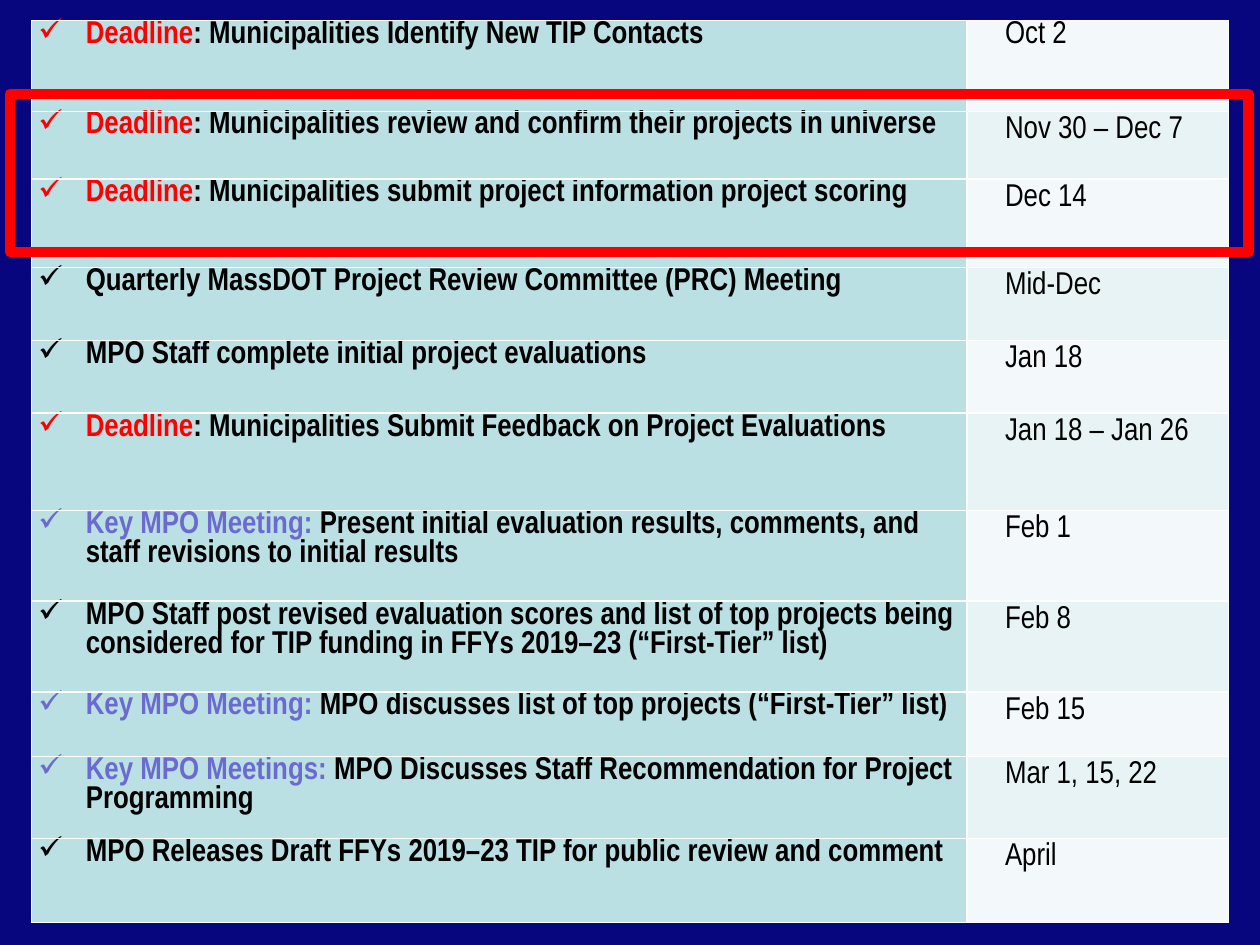
"""Builds the slide with the TIP development schedule and its highlighted deadlines."""
from dataclasses import dataclass
from typing import Optional

from lxml.etree import SubElement
from pptx import Presentation
from pptx.dml.color import RGBColor
from pptx.enum.shapes import MSO_SHAPE
from pptx.oxml.ns import qn
from pptx.util import Cm, Pt


@dataclass(frozen=True)
class Theme:
    """Colours, font and sizes of the slide."""
    back: str = "07067E"
    task_fill: str = "BBE0E3"
    date_fills: tuple = ("F3F9FA", "E7F3F4")
    border: str = "FEFFFC"
    text: str = "000000"
    deadline: str = "FF0000"
    meeting: str = "6B6BCF"
    font: str = "Arial Narrow"
    size: float = 18
    thin: float = 0.25
    rule: float = 1
    frame: float = 6


@dataclass(frozen=True)
class Step:
    """One schedule row: height in cm, task, date and an optional coloured lead."""
    height: float
    task: str
    date: str
    lead: str = ""
    color: Optional[str] = None


T = Theme()
COLS = (18.85, 5.28)
STEPS = (
    Step(1.83, ": Municipalities Identify New TIP Contacts", "Oct 2", "Deadline", T.deadline),
    Step(1.37, ": Municipalities review and confirm their projects in universe",
         "Nov 30 – Dec 7", "Deadline", T.deadline),
    Step(1.78, ": Municipalities submit project information project scoring",
         "Dec 14", "Deadline", T.deadline),
    Step(1.47, "Quarterly MassDOT Project Review Committee (PRC) Meeting", "Mid-Dec"),
    Step(1.47, "MPO Staff complete initial project evaluations", "Jan 18"),
    Step(1.96, ": Municipalities Submit Feedback on Project Evaluations",
         "Jan 18 – Jan 26", "Deadline", T.deadline),
    Step(1.83, "Present initial evaluation results, comments, and staff revisions to initial results",
         "Feb 1", "Key MPO Meeting: ", T.meeting),
    Step(1.83, "MPO Staff post revised evaluation scores and list of top projects being "
         "considered for TIP funding in FFYs 2019–23 (“First-Tier” list)", "Feb 8"),
    Step(1.3, "MPO discusses list of top projects (“First-Tier” list)",
         "Feb 15", "Key MPO Meeting: ", T.meeting),
    Step(1.65, "MPO Discusses Staff Recommendation for Project Programming",
         "Mar 1, 15, 22", "Key MPO Meetings: ", T.meeting),
    Step(1.7, "MPO Releases Draft FFYs 2019–23 TIP for public review and comment", "April"),
)


def rgb(color: str) -> RGBColor:
    """Turn a hex string into a colour."""
    return RGBColor.from_string(color)


def apply(obj, formats: dict) -> None:
    """Set every attribute named in the format values."""
    for name, value in formats.items():
        setattr(obj, name, value)


def add_run(p, text: str, color: str, bold: bool) -> None:
    """Add one formatted run to a paragraph."""
    r = p.add_run()
    r.text = text
    apply(r.font, {"name": T.font, "size": Pt(T.size), "bold": bold})
    r.font.color.rgb = rgb(color)


def style_cell(cell, fill: str, top: float, bottom: float) -> None:
    """Give a cell its margins, borders and fill."""
    apply(cell, {"margin_left": Cm(0.13), "margin_right": Cm(0.13),
                 "margin_top": 0, "margin_bottom": 0})
    tc_pr = cell._tc.get_or_add_tcPr()
    for side, width in (("L", T.rule), ("R", T.rule), ("T", top), ("B", bottom)):
        ln = SubElement(tc_pr, qn(f"a:ln{side}"), w=str(Pt(width)))
        SubElement(SubElement(ln, qn("a:solidFill")), qn("a:srgbClr"), val=T.border)
    cell.fill.solid()
    cell.fill.fore_color.rgb = rgb(fill)


def fill_task(cell, step: Step) -> None:
    """Write the checked task with its coloured lead."""
    p = cell.text_frame.paragraphs[0]
    p_pr = p._p.get_or_add_pPr()
    apply_indent = {"marL": str(Cm(0.96)), "indent": str(-Cm(0.96))}
    for name, value in apply_indent.items():
        p_pr.set(name, value)
    SubElement(p_pr, qn("a:buChar"), char="✓")
    if step.lead:
        add_run(p, step.lead, step.color, True)
    add_run(p, step.task, T.text, True)


def fill_date(cell, step: Step, spacing: float) -> None:
    """Write the date of a step."""
    p = cell.text_frame.paragraphs[0]
    p._p.get_or_add_pPr().set("marL", str(Cm(0.64)))
    p.line_spacing = spacing
    add_run(p, step.date, T.text, False)


def add_schedule(s) -> None:
    """Draw the schedule table."""
    height = sum(step.height for step in STEPS)
    tbl = s.shapes.add_table(len(STEPS), len(COLS), Cm(0.64), Cm(0.41),
                             Cm(sum(COLS)), Cm(height)).table
    apply(tbl, {"first_row": False, "horz_banding": False})
    for col, width in zip(tbl.columns, COLS):
        col.width = Cm(width)
    for i, step in enumerate(STEPS):
        tbl.rows[i].height = Cm(step.height)
        top = T.thin if i == 1 else T.rule
        bottom = T.thin if i == 0 else T.rule
        task, date = tbl.cell(i, 0), tbl.cell(i, 1)
        style_cell(task, T.task_fill, top, bottom)
        style_cell(date, T.date_fills[i % 2], top, bottom)
        fill_task(task, step)
        fill_date(date, step, 1.15 if i else 1.0)


def add_highlight(s) -> None:
    """Frame the municipal project deadlines."""
    sp = s.shapes.add_shape(MSO_SHAPE.RECTANGLE, Cm(0.2), Cm(1.9), Cm(24.97), Cm(3.18))
    sp.shadow.inherit = False
    sp.fill.background()
    sp.line.color.rgb = rgb(T.deadline)
    sp.line.width = Pt(T.frame)
    SubElement(sp.line._get_or_add_ln(), qn("a:round"))


def main() -> None:
    """Build and save the slide."""
    prs = Presentation()
    apply(prs, {"slide_width": Cm(25.4), "slide_height": Cm(19.05)})
    s = prs.slides.add_slide(prs.slide_layouts[6])
    s.background.fill.solid()
    s.background.fill.fore_color.rgb = rgb(T.back)
    add_schedule(s)
    add_highlight(s)
    prs.save("out.pptx")


if __name__ == "__main__":
    main()
